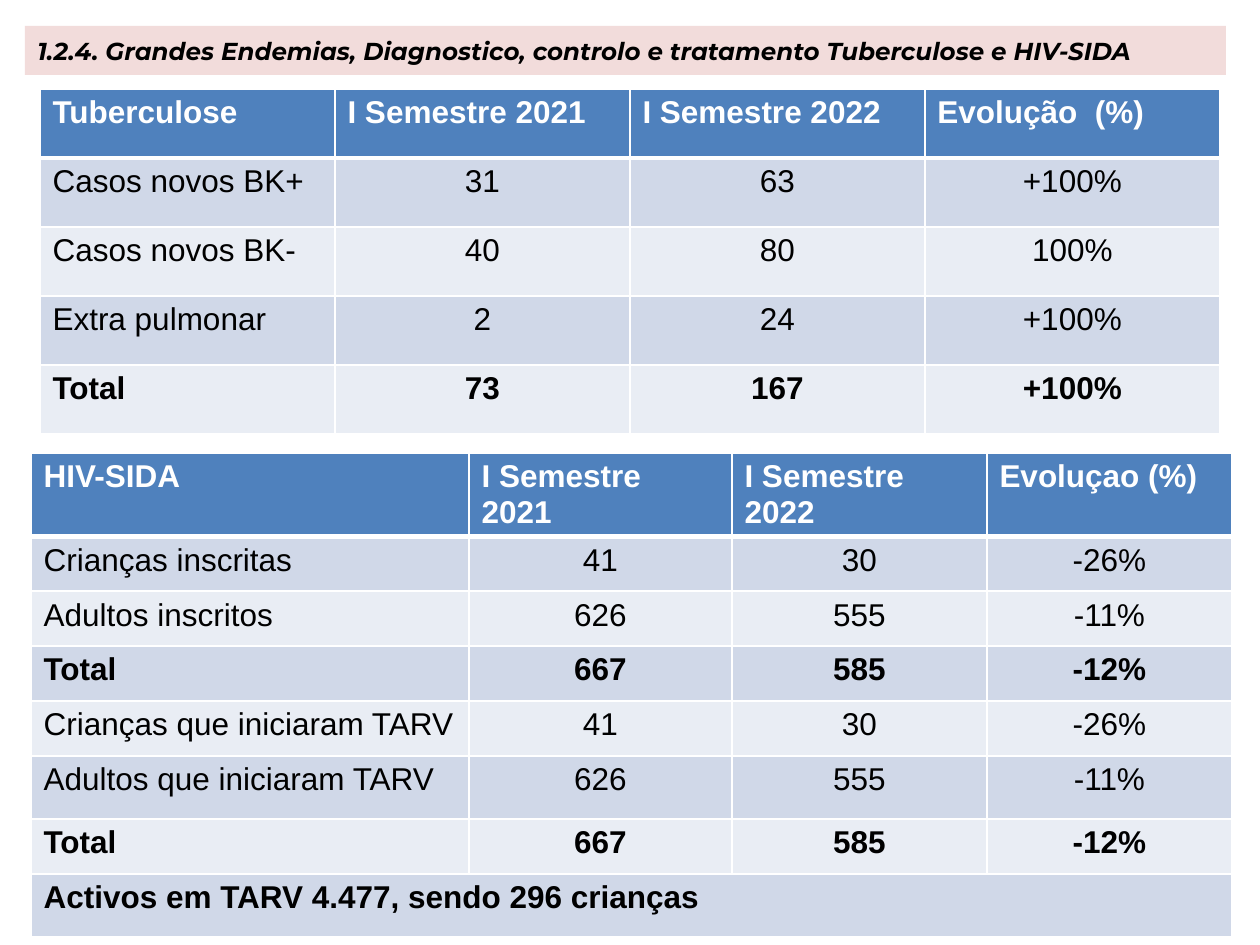
from lxml import etree
from pptx import Presentation
from pptx.dml.color import RGBColor
from pptx.enum.shapes import MSO_SHAPE
from pptx.enum.text import MSO_ANCHOR, PP_ALIGN
from pptx.oxml.ns import qn
from pptx.util import Emu, Pt

PX = 914400 // 126
COLORS = {
    "banner": "F2DCDB",
    "header": "4F81BD",
    "odd": "D0D8E8",
    "even": "E9EDF4",
    "white": "FFFFFF",
    "black": "000000",
}


def style_run(r, font, size, color, bold, italic=False):
    r.font.name = font
    r.font.size = Pt(size)
    r.font.bold = bold
    r.font.italic = italic
    r.font.color.rgb = RGBColor.from_string(COLORS[color])


def add_border(cell, side, width):
    tcPr = cell._tc.get_or_add_tcPr()
    ln = etree.SubElement(tcPr, qn(f"a:ln{side}"), w=str(Pt(width)))
    fill = etree.SubElement(ln, qn("a:solidFill"))
    etree.SubElement(fill, qn("a:srgbClr"), val=COLORS["white"])


prs = Presentation()
prs.slide_width = Emu(1260 * PX)
prs.slide_height = Emu(945 * PX)
s = prs.slides.add_slide(prs.slide_layouts[6])

sp = s.shapes.add_shape(MSO_SHAPE.RECTANGLE, 25 * PX, 26 * PX, 1201 * PX, 49 * PX)
sp.shadow.inherit = False
sp.fill.solid()
sp.fill.fore_color.rgb = RGBColor.from_string(COLORS["banner"])
sp.line.fill.background()
tf = sp.text_frame
tf.word_wrap = True
tf.vertical_anchor = MSO_ANCHOR.MIDDLE
p = tf.paragraphs[0]
p.text = "1.2.4. Grandes Endemias, Diagnostico, controlo e tratamento Tuberculose e HIV-SIDA"
p.alignment = PP_ALIGN.LEFT
style_run(p.runs[0], "Montserrat", 14, "black", True, True)

hiv = [
    ["HIV-SIDA", "I Semestre 2021", "I Semestre 2022", "Evoluçao (%)"],
    ["Crianças inscritas", "41", "30", "-26%"],
    ["Adultos inscritos", "626", "555", "-11%"],
    ["Total", "667", "585", "-12%"],
    ["Crianças que iniciaram TARV", "41", "30", "-26%"],
    ["Adultos que iniciaram TARV", "626", "555", "-11%"],
    ["Total", "667", "585", "-12%"],
    ["Activos em TARV 4.477, sendo 296 crianças", "", "", ""],
]
tuberculosis = [
    ["Tuberculose", "I Semestre 2021", "I Semestre 2022", "Evolução  (%)"],
    ["Casos novos BK+", "31", "63", "+100%"],
    ["Casos novos BK-", "40", "80", "100%"],
    ["Extra pulmonar", "2", "24", "+100%"],
    ["Total", "73", "167", "+100%"],
]
tables = [
    (hiv, 31, 453, [438, 263, 255, 245], [59, 55, 55, 55, 55, 63, 55, 63]),
    (tuberculosis, 40, 89, [295] * 4, [69] * 5),
]

for rows, left, top, widths, heights in tables:
    frame = s.shapes.add_table(len(rows), len(widths), left * PX, top * PX,
                               sum(widths) * PX, sum(heights) * PX)
    table = frame.table
    for column, width in zip(table.columns, widths):
        column.width = Emu(width * PX)
    for i, row in enumerate(rows):
        table.rows[i].height = Emu(heights[i] * PX)
        fill = "header" if i == 0 else "odd" if i % 2 else "even"
        bold = i == 0 or row[0].startswith(("Total", "Activos"))
        for j, text in enumerate(row):
            cell = table.cell(i, j)
            for side in "LRTB":
                thick = (i, side) in [(0, "B"), (1, "T")]
                add_border(cell, side, 3 if thick else 1)
            cell.fill.solid()
            cell.fill.fore_color.rgb = RGBColor.from_string(COLORS[fill])
            p = cell.text_frame.paragraphs[0]
            p.text = text
            p.alignment = PP_ALIGN.CENTER if i and j else PP_ALIGN.LEFT
            for r in p.runs:
                style_run(r, "Arial", 18, "black" if i else "white", bold)
        if not any(row[1:]):
            table.cell(i, 0).merge(table.cell(i, len(widths) - 1))

prs.save("out.pptx")
